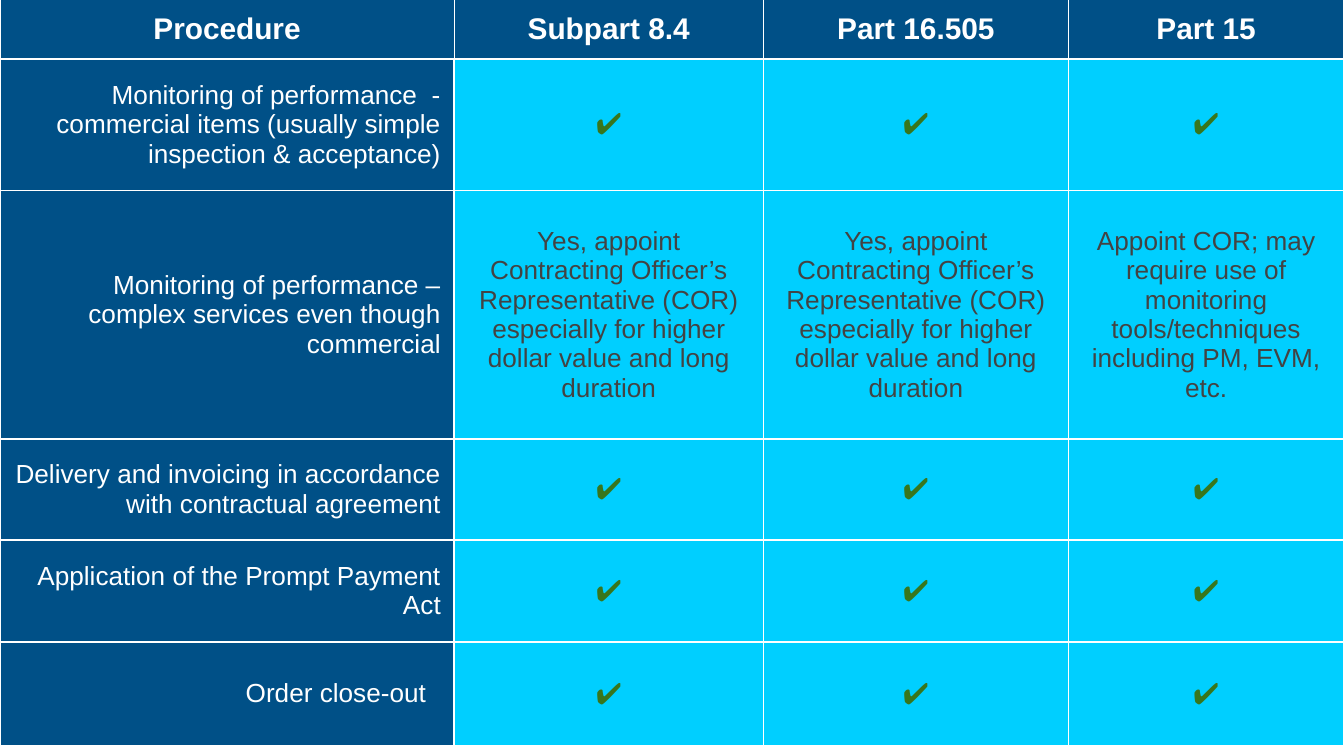
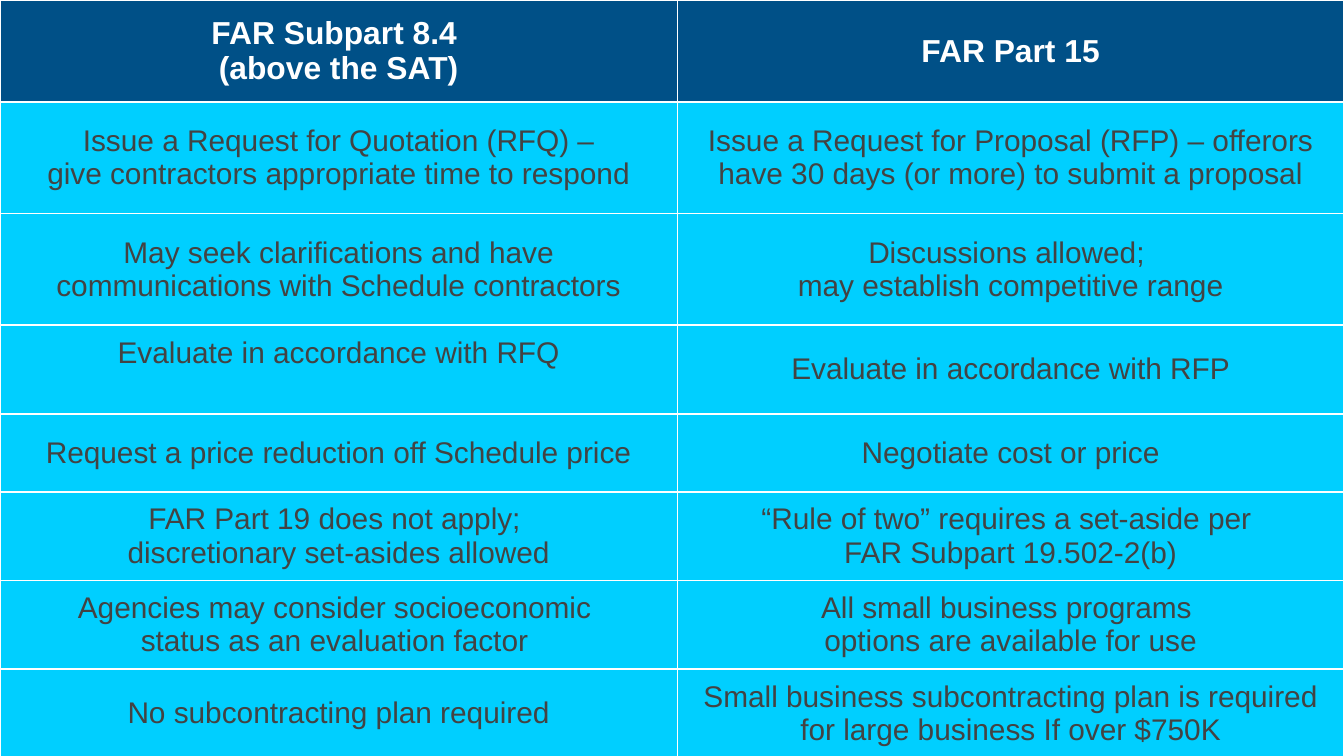
"""Builds two slides of procurement comparison tables."""
from lxml import etree
from pptx import Presentation
from pptx.dml.color import RGBColor
from pptx.enum.text import MSO_ANCHOR, PP_ALIGN
from pptx.oxml.ns import qn
from pptx.util import Inches, Pt

CENTER, RIGHT = PP_ALIGN.CENTER, PP_ALIGN.RIGHT
MIDDLE = MSO_ANCHOR.MIDDLE
FONT = "Arial"
NAVY, CYAN, WHITE, GRAY, GREEN = "005087", "00CFFF", "FFFFFF", "434343", "38761D"
CHECK = "✔"
CHECKS = [CHECK] * 3
APPOINT = ("Yes, appoint Contracting Officer’s Representative (COR) "
           "especially for higher dollar value and long duration")

PROCEDURES = [
    ["Procedure", "Subpart 8.4", "Part 16.505", "Part 15"],
    ["Monitoring of performance  - commercial items "
     "(usually simple inspection & acceptance)", *CHECKS],
    ["Monitoring of performance – complex services even though commercial",
     APPOINT, APPOINT,
     "Appoint COR; may require use of monitoring tools/techniques "
     "including PM, EVM, etc."],
    ["Delivery and invoicing in accordance with contractual agreement", *CHECKS],
    ["Application of the Prompt Payment Act", *CHECKS],
    ["Order close-out  ", *CHECKS],
]

COMPARISON = [
    ["FAR Subpart 8.4 \n(above the SAT)", "FAR Part 15"],
    ["Issue a Request for Quotation (RFQ) –\n"
     "give contractors appropriate time to respond",
     "Issue a Request for Proposal (RFP) – offerors "
     "have 30 days (or more) to submit a proposal"],
    ["May seek clarifications and have communications with Schedule contractors",
     "Discussions allowed; \nmay establish competitive range"],
    ["Evaluate in accordance with RFQ", "Evaluate in accordance with RFP"],
    ["Request a price reduction off Schedule price", "Negotiate cost or price"],
    ["FAR Part 19 does not apply; \ndiscretionary set-asides allowed",
     "“Rule of two” requires a set-aside per \nFAR Subpart 19.502-2(b)"],
    ["Agencies may consider socioeconomic \nstatus as an evaluation factor ",
     "All small business programs \noptions are available for use"],
    ["No subcontracting plan required",
     "Small business subcontracting plan is required "
     "for large business If over $750K"],
]


def color(value):
    return RGBColor.from_string(value)


class Slides:
    def __init__(self):
        self.deck = Presentation()
        self.deck.slide_width = Inches(10)
        self.deck.slide_height = Inches(10) * 9 // 16
        self.page = None

    def add_page(self):
        self.page = self.deck.slides.add_slide(self.deck.slide_layouts[6])

    def border(self, cell, edge, width):
        line = etree.SubElement(cell._tc.get_or_add_tcPr(), qn(f"a:ln{edge}"),
                                w=str(Pt(width)))
        fill = etree.SubElement(line, qn("a:solidFill"))
        etree.SubElement(fill, qn("a:srgbClr"), val=WHITE)

    def cell(self, cell, text, size=14, ink=GRAY, fill=CYAN, bold=False,
             align=CENTER, header=False):
        for edge in "LRTB":
            self.border(cell, edge, 0.75 if header and edge != "B" else 1)
        cell.fill.solid()
        cell.fill.fore_color.rgb = color(fill)
        cell.vertical_anchor = MIDDLE
        cell.margin_left = cell.margin_right = Inches(0.1)
        cell.margin_top = cell.margin_bottom = Inches(0.1 if header else 0.05)
        cell.text = text
        for para in cell.text_frame.paragraphs:
            para.alignment = align
            for span in para.runs:
                span.font.name = FONT
                span.font.size = Pt(size)
                span.font.bold = bold
                span.font.color.rgb = color(ink)

    def table(self, rows, top, widths, heights, style):
        frame = self.page.shapes.add_table(
            len(rows), len(widths), Inches(0), Inches(top),
            Inches(sum(widths)), Inches(sum(heights)))
        table = frame.table
        table.first_row = table.horz_banding = False
        for column, width in zip(table.columns, widths):
            column.width = Inches(width)
        for row, height in zip(table.rows, heights):
            row.height = Inches(height)
        for r, texts in enumerate(rows):
            for c, text in enumerate(texts):
                self.cell(table.cell(r, c), text, **style(r, c, text))
        return table


def header_style(size):
    return dict(size=size, ink=WHITE, fill=NAVY, bold=True, header=True)


def procedure_style(row, column, text):
    if row == 0:
        return header_style(16)
    if column == 0:
        return dict(ink=WHITE, fill=NAVY, align=RIGHT)
    if text == CHECK:
        return dict(size=16, ink=GREEN, bold=True)
    return {}


def comparison_style(row, column, text):
    return header_style(17) if row == 0 else dict(size=16)


def main():
    slides = Slides()
    slides.add_page()
    slides.table(PROCEDURES, -0.01, [3.38, 2.3, 2.27, 2.05],
                 [0.44, 0.98, 1.85, 0.75, 0.76, 0.77], procedure_style)
    slides.add_page()
    comparison = slides.table(COMPARISON, 0, [5.04, 4.96],
                              [0.76, 0.83, 0.83, 0.66, 0.58, 0.66, 0.66, 0.66],
                              comparison_style)
    comparison.cell(3, 0).margin_bottom = Inches(0.29)
    slides.deck.save("out.pptx")


if __name__ == "__main__":
    main()
